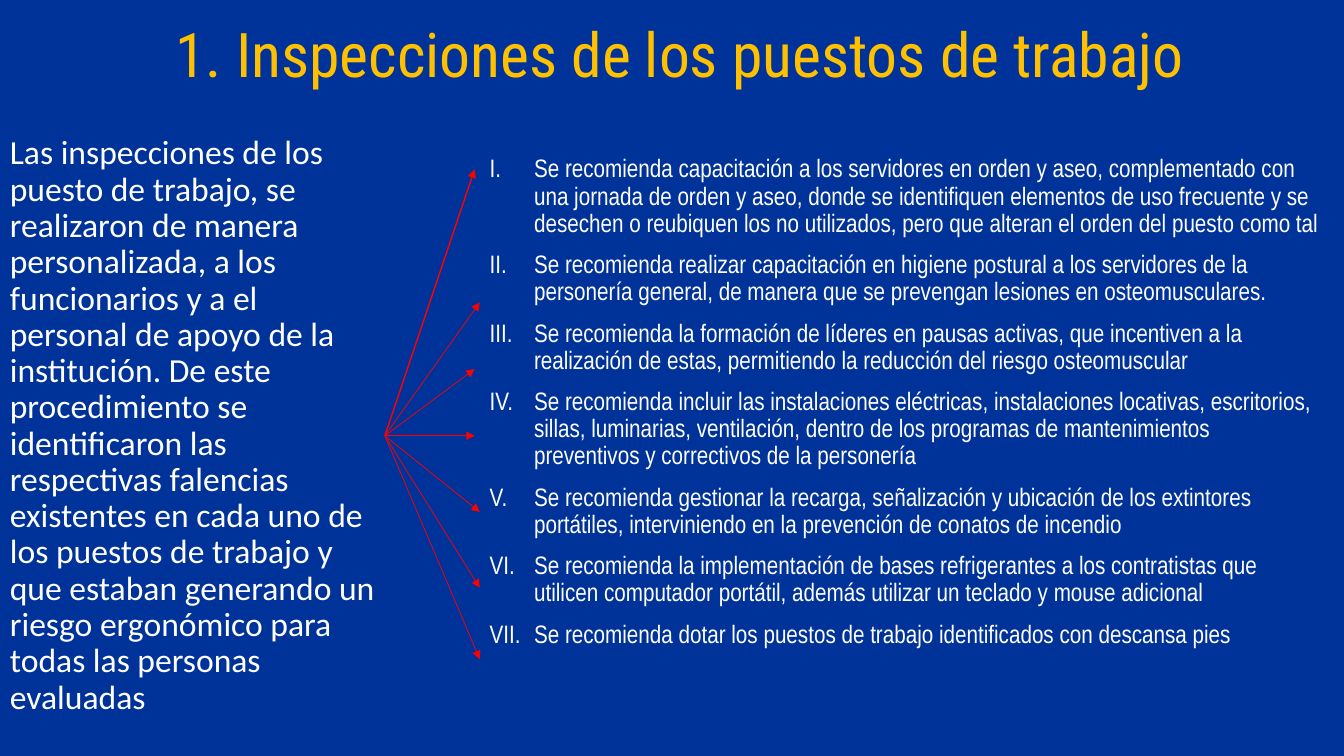
import pptx
import pptx.dml.color
import pptx.enum.shapes
import pptx.enum.text
import pptx.oxml.ns
import pptx.util
from lxml import etree
from pptx.util import Cm, Pt

BLUE, GOLD, WHITE, RED = "003399", "FFC000", "FFFFFF", "FF0000"

TITLE = "1. Inspecciones de los puestos de trabajo"
SUMMARY = (
    "Las inspecciones de los puesto de trabajo, se realizaron de manera personalizada, "
    "a los funcionarios y a el personal de apoyo de la institución. De este procedimiento "
    "se identificaron las respectivas falencias existentes en cada uno de los puestos de "
    "trabajo y que estaban generando un riesgo ergonómico para todas las personas evaluadas"
)
RECOMMENDATIONS = [
    "Se recomienda capacitación a los servidores en orden y aseo, complementado con una "
    "jornada de orden y aseo, donde se identifiquen elementos de uso frecuente y se "
    "desechen o reubiquen los no utilizados, pero que alteran el orden del puesto como tal",
    "Se recomienda realizar capacitación en higiene postural a los servidores de la "
    "personería general, de manera que se prevengan lesiones en osteomusculares.",
    "Se recomienda la formación de líderes en pausas activas, que incentiven a la "
    "realización de estas, permitiendo la reducción del riesgo osteomuscular",
    "Se recomienda incluir las instalaciones eléctricas, instalaciones locativas, "
    "escritorios, sillas, luminarias, ventilación, dentro de los programas de "
    "mantenimientos preventivos y correctivos de la personería",
    "Se recomienda gestionar la recarga, señalización y ubicación de los extintores "
    "portátiles, interviniendo en la prevención de conatos de incendio",
    "Se recomienda la implementación de bases refrigerantes a los contratistas que "
    "utilicen computador portátil, además utilizar un teclado y mouse adicional",
    "Se recomienda dotar los puestos de trabajo identificados con descansa pies",
]
# Arrow tips: x and y in cm, line width in points
ARROWS = [
    (11.96, 4.27, 1),
    (12.09, 7.62, 0.5),
    (11.96, 9.3, 0.5),
    (11.96, 10.98, 0.5),
    (12.09, 12.9, 0.5),
    (12.09, 14.81, 0.5),
    (12.09, 16.61, 0.5),
]
NUMBER_INDENT = Cm(1.12)


def color(hex_string):
    return pptx.dml.color.RGBColor.from_string(hex_string)


def add_element(parent, tag, **attributes):
    return etree.SubElement(parent, pptx.oxml.ns.qn(tag), attributes)


def add_text(slide, box, texts, font, size, text_color, space_before=0):
    shape = slide.shapes.add_textbox(*map(Cm, box))
    frame = shape.text_frame
    frame.word_wrap = True
    for index, text in enumerate(texts):
        paragraph = frame.add_paragraph() if index else frame.paragraphs[0]
        paragraph.line_spacing = 0.9
        paragraph.space_before = Pt(space_before)
        run = paragraph.add_run()
        run.text = text
        run.font.name = font
        run.font.size = Pt(size)
        run.font.color.rgb = color(text_color)
    return shape


def number_paragraphs(shape):
    """Give every paragraph a hanging Roman numeral."""
    for paragraph in shape.text_frame.paragraphs:
        properties = paragraph._p.get_or_add_pPr()
        properties.set("marL", str(NUMBER_INDENT))
        properties.set("indent", str(-NUMBER_INDENT))
        add_element(properties, "a:buFont", typeface="+mj-lt")
        add_element(properties, "a:buAutoNum", type="romanUcPeriod")


def add_arrow(slide, source, x, y, width):
    """Draw an arrow from the middle of the source's right side."""
    arrow = slide.shapes.add_connector(
        pptx.enum.shapes.MSO_CONNECTOR.STRAIGHT, 0, 0, Cm(x), Cm(y))
    arrow.begin_connect(source, 3)
    arrow.line.color.rgb = color(RED)
    arrow.line.width = Pt(width)
    add_element(arrow.line._get_or_add_ln(), "a:tailEnd", type="triangle")
    add_element(arrow._element.spPr, "a:effectLst")


def main():
    presentation = pptx.Presentation()
    presentation.slide_width = Cm(33.87)
    presentation.slide_height = Cm(19.05)
    slide = presentation.slides.add_slide(presentation.slide_layouts[6])
    slide.background.fill.solid()
    slide.background.fill.fore_color.rgb = color(BLUE)

    title = add_text(slide, (2.54, -0.38, 29.21, 3.68), [TITLE],
                     "Roboto Condensed", 44, GOLD)
    title.text_frame.vertical_anchor = pptx.enum.text.MSO_ANCHOR.MIDDLE
    title.text_frame.paragraphs[0].alignment = pptx.enum.text.PP_ALIGN.CENTER

    summary = add_text(slide, (0, 3.3, 9.7, 15.36), [SUMMARY],
                       "Calibri", 24, WHITE, space_before=10)
    recommendations = add_text(slide, (12.09, 3.81, 21.41, 13.44), RECOMMENDATIONS,
                               "Arial Narrow", 18, WHITE, space_before=10)
    number_paragraphs(recommendations)

    for x, y, width in ARROWS:
        add_arrow(slide, summary, x, y, width)

    presentation.save("out.pptx")


if __name__ == "__main__":
    main()
